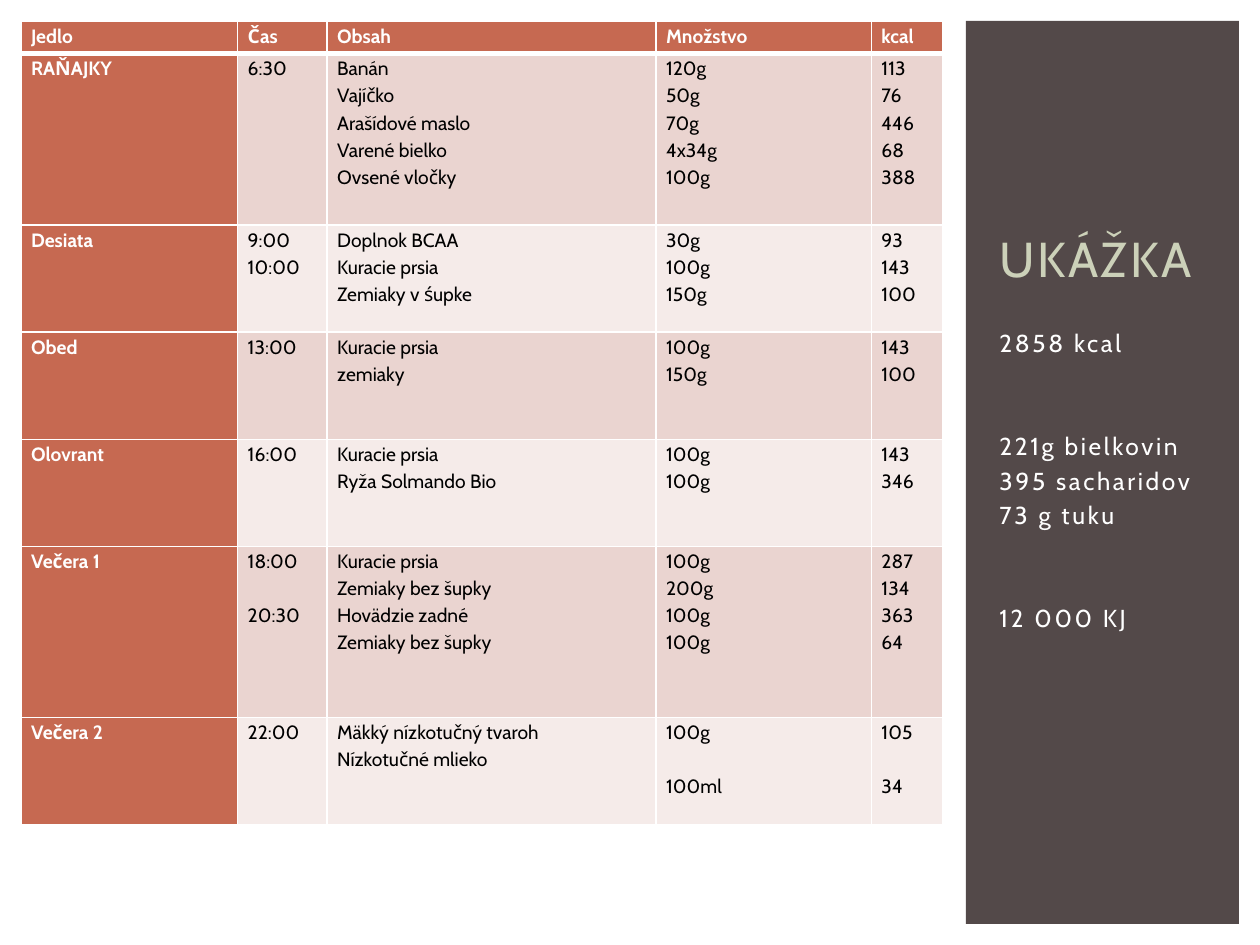
from lxml.etree import SubElement
from pptx import Presentation
from pptx.dml.color import RGBColor
from pptx.enum.shapes import MSO_SHAPE
from pptx.enum.text import MSO_ANCHOR
from pptx.oxml.ns import qn
from pptx.util import Inches, Pt

FONT = "Cabin"
WHITE, DARK, SAGE, RUST = "FFFFFF", "534949", "CCD1B9", "C66951"
BANDS = ["EAD4D0", "F5EBE9"]
COLS, ROWS = 60, 45  # slide grid
UNIT = Inches(10) / COLS

COL_WIDTHS = [1.72, 0.71, 2.61, 1.71, 0.57]
HEADER_HEIGHT, SHORT, TALL = 0.26, 0.85, 1.36
HEADER = ["Jedlo", "Čas", "Obsah", "Množstvo", "kcal"]
# Row height, then the cells; "|" separates lines, an empty line is a gap
MEALS = [
    (TALL, "RAŇAJKY", "6:30",
     "Banán|Vajíčko|Arašídové maslo|Varené bielko|Ovsené vločky",
     "120g|50g|70g|4x34g|100g", "113|76|446|68|388"),
    (SHORT, "Desiata", "9:00|10:00", "Doplnok BCAA|Kuracie prsia|Zemiaky v śupke",
     "30g|100g|150g", "93|143|100"),
    (SHORT, "Obed", "13:00", "Kuracie prsia|zemiaky", "100g|150g", "143|100"),
    (SHORT, "Olovrant", "16:00", "Kuracie prsia|Ryža Solmando Bio",
     "100g|100g", "143|346"),
    (TALL, "Večera 1", "18:00||20:30",
     "Kuracie prsia|Zemiaky bez šupky|Hovädzie zadné|Zemiaky bez šupky",
     "100g|200g|100g|100g", "287|134|363|64"),
    (SHORT, "Večera 2", "22:00", "Mäkký nízkotučný tvaroh|Nízkotučné mlieko",
     "100g||100ml", "105||34"),
]
TOTALS = "2858 kcal|||221g bielkovin|395 sacharidov|73 g tuku|||12 000 KJ"


def rgb(color):
    return RGBColor.from_string(color)


def grid(*cells):
    return [round(n * UNIT) for n in cells]


def write(tf, text, size, color, pitch, before=0, bold=False, spacing=None, leading=None):
    """Write the lines; each empty one widens the next gap by one pitch (points)."""
    gap, p = 0, None
    for line in text.split("|"):
        if not line:
            gap += pitch
            continue
        p = tf.add_paragraph() if p is not None else tf.paragraphs[0]
        r = p.add_run()
        r.text = line
        p.font.name, p.font.size, p.font.bold = FONT, Pt(size), bold
        p.font.color.rgb = rgb(color)
        p.space_before = Pt(before + gap)
        if leading:
            p.line_spacing = leading
        if spacing:
            r.font._element.set("spc", str(round(spacing * 100)))
        gap = 0


def add_panel(s, box, color):
    sp = s.shapes.add_shape(MSO_SHAPE.RECTANGLE, *grid(*box))
    sp.shadow.inherit = False
    sp.fill.solid()
    sp.fill.fore_color.rgb = rgb(color)
    sp.line.fill.background()


def add_text(s, box, text, **style):
    tf = s.shapes.add_textbox(*grid(*box)).text_frame
    tf.word_wrap = True
    write(tf, text, spacing=1.5, **style)
    return tf


def set_borders(cell, bottom):
    tcPr = cell._tc.get_or_add_tcPr()
    for i, (side, width) in enumerate([("L", 1), ("R", 1), ("T", 1), ("B", bottom)]):
        ln = SubElement(tcPr, qn(f"a:ln{side}"), w=str(Pt(width)))
        tcPr.remove(ln)
        tcPr.insert(i, ln)
        fill = SubElement(ln, qn("a:solidFill"))
        SubElement(fill, qn("a:srgbClr"), val=WHITE)


def fill_cell(cell, text, fill, heading, bottom):
    cell.margin_left = cell.margin_right = Inches(0.08)
    cell.margin_top = cell.margin_bottom = 0
    cell.fill.solid()
    cell.fill.fore_color.rgb = rgb(fill)
    write(cell.text_frame, text, 11, WHITE if heading else "000000",
          pitch=15.4, bold=heading, leading=1.15)
    set_borders(cell, bottom)


def meal_table(s, box):
    rows = [(HEADER_HEIGHT, *HEADER), *MEALS]
    table = s.shapes.add_table(len(rows), len(HEADER), *grid(*box)).table
    for col, width in zip(table.columns, COL_WIDTHS):
        col.width = Inches(width)
    for i, (height, *texts) in enumerate(rows):
        table.rows[i].height = Inches(height)
        for j, text in enumerate(texts):
            heading = i == 0 or j == 0
            fill = RUST if heading else BANDS[(i - 1) % 2]
            fill_cell(table.cell(i, j), text, fill, heading, bottom=1 if i else 3)


def sidebar(s, left, top, width, height):
    add_panel(s, (left, top, width, height), DARK)
    inner = width - 2
    totals = add_text(s, (left + 1, top + 13, inner, 19.5), TOTALS,
                      size=14, color=WHITE, pitch=19.7, before=2.8)
    totals.margin_top = Inches(0.27)
    title = add_text(s, (left + 1, top + 2, inner, 11), "UKÁŽKA",
                     size=28, color=SAGE, pitch=0)
    title.vertical_anchor = MSO_ANCHOR.BOTTOM


def main():
    prs = Presentation()
    prs.slide_width, prs.slide_height = grid(COLS, ROWS)
    s = prs.slides.add_slide(prs.slide_layouts[6])
    s.background.fill.solid()
    s.background.fill.fore_color.rgb = rgb(DARK)
    add_panel(s, (0, 0, COLS, ROWS), WHITE)
    meal_table(s, (1, 1, 44, 38.3))
    sidebar(s, 46, 1, 13, 43)
    prs.save("out.pptx")


if __name__ == "__main__":
    main()
